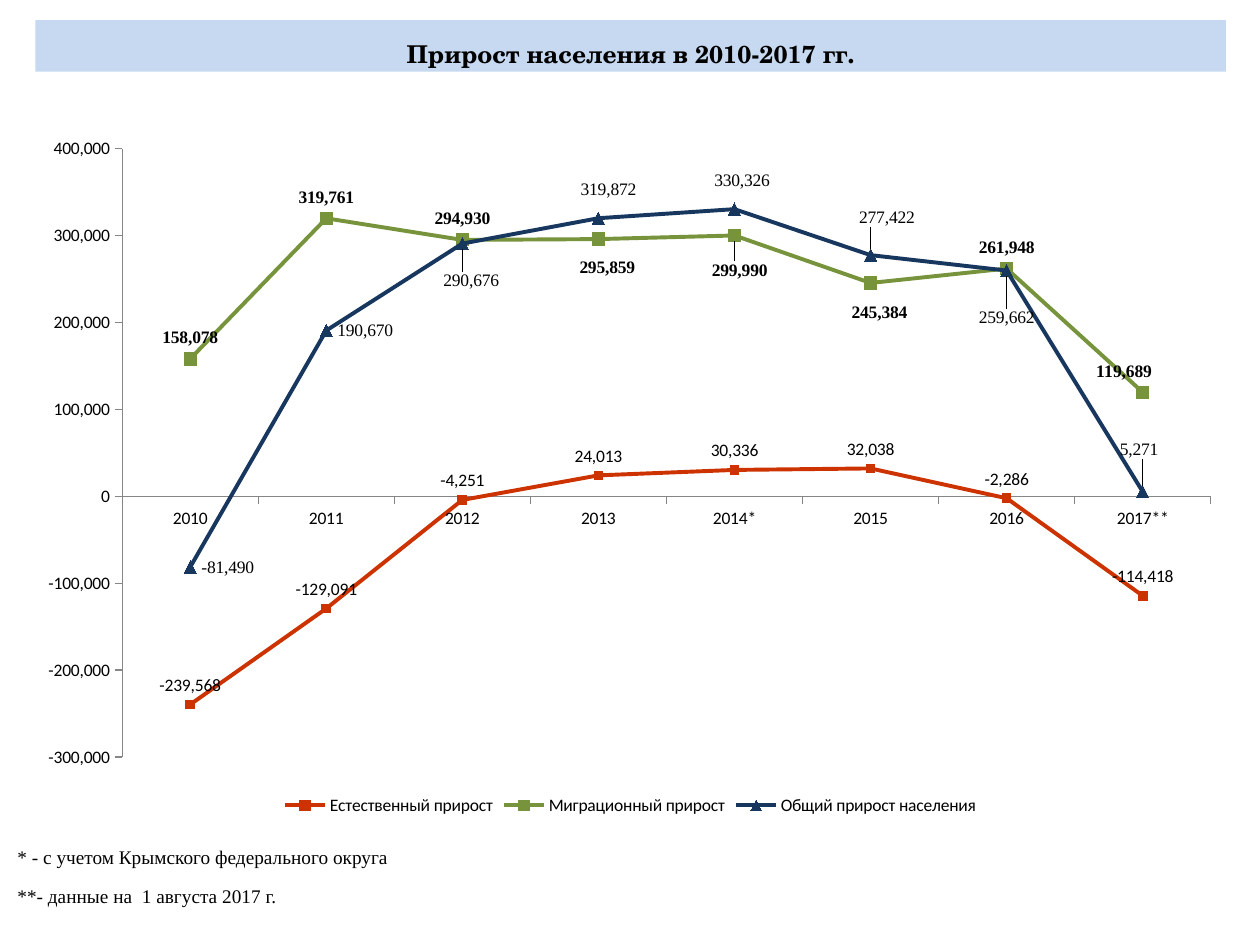
from lxml.etree import SubElement
from pptx import Presentation
from pptx.chart.data import CategoryChartData
from pptx.dml.color import RGBColor
from pptx.enum.chart import (XL_CHART_TYPE, XL_LABEL_POSITION, XL_LEGEND_POSITION,
                             XL_MARKER_STYLE, XL_TICK_MARK)
from pptx.enum.shapes import MSO_SHAPE
from pptx.enum.text import MSO_ANCHOR, MSO_AUTO_SIZE, PP_ALIGN
from pptx.oxml.ns import qn
from pptx.util import Inches, Pt

BLACK = RGBColor(0x00, 0x00, 0x00)
GREY = RGBColor(0x86, 0x86, 0x86)
PALE_BLUE = RGBColor(0xC6, 0xD9, 0xF1)
RED = RGBColor(0xCC, 0x33, 0x00)
GREEN = RGBColor(0x77, 0x93, 0x3C)
NAVY = RGBColor(0x17, 0x37, 0x5E)
SERIF = "Times New Roman"
ABOVE, BELOW, RIGHT = (XL_LABEL_POSITION.ABOVE, XL_LABEL_POSITION.BELOW,
                       XL_LABEL_POSITION.RIGHT)

TITLE = "Прирост населения в 2010-2017 гг."
FOOTNOTES = ["* - с учетом Крымского федерального округа",
             "**- данные на  1 августа 2017 г."]
YEARS = ["2010", "2011", "2012", "2013", "2014*", "2015", "2016", "2017**"]
# "moved" maps a point to its label side and the shift from there, in inches
SERIES = [
    dict(name="Естественный прирост", color=RED, marker=XL_MARKER_STYLE.SQUARE, size=5,
         values=[-239568, -129091, -4251, 24013, 30336, 32038, -2286, -114418],
         font="Calibri", bold=False, side=ABOVE, moved={}),
    dict(name="Миграционный прирост", color=GREEN, marker=XL_MARKER_STYLE.SQUARE, size=7,
         values=[158078, 319761, 294930, 295859, 299990, 245384, 261948, 119689],
         font=SERIF, bold=True, side=ABOVE,
         moved={3: (BELOW, 0.07, 0.06), 4: (BELOW, 0.04, 0.11),
                5: (BELOW, 0.07, 0.07), 7: (ABOVE, -0.15, 0)}),
    dict(name="Общий прирост населения", color=NAVY, marker=XL_MARKER_STYLE.TRIANGLE, size=7,
         values=[-81490, 190670, 290676, 319872, 330326, 277422, 259662, 5271],
         font=SERIF, bold=False, side=RIGHT,
         moved={2: (BELOW, 0.07, 0.13), 3: (ABOVE, 0.08, -0.06),
                4: (ABOVE, 0.06, -0.06), 5: (ABOVE, 0.13, -0.13),
                6: (BELOW, 0, 0.21), 7: (ABOVE, -0.03, -0.17)}),
]
CHART_BOX = (0.2, 0.99, 9.61, 5.52)
PLOT_BOX = (0.97, 1.18, 8.64, 4.83)


def style_font(font, name, size, bold=False):
    font.name, font.size, font.bold = name, Pt(size), bold
    font.color.rgb = BLACK


def fill_layout(layout, **settings):
    """Write a manual chart layout, whose lengths are shares of the chart."""
    manual = SubElement(layout, qn("c:manualLayout"))
    for tag, value in settings.items():
        SubElement(manual, qn(f"c:{tag}")).set("val", str(value))


def add_title(slide):
    banner = slide.shapes.add_shape(MSO_SHAPE.RECTANGLE, Inches(0.28), Inches(0.16),
                                    Inches(9.45), Inches(0.41))
    banner.shadow.inherit = False
    banner.fill.solid()
    banner.fill.fore_color.rgb = PALE_BLUE
    banner.line.fill.background()
    banner.text_frame.text = TITLE
    banner.text_frame.word_wrap = True
    banner.text_frame.vertical_anchor = MSO_ANCHOR.MIDDLE
    paragraph = banner.text_frame.paragraphs[0]
    paragraph.alignment = PP_ALIGN.CENTER
    paragraph.line_spacing = 1.5
    style_font(paragraph.runs[0].font, "TeX Gyre Schola", 14, True)


def add_footnotes(slide):
    for index, note in enumerate(FOOTNOTES):
        box = slide.shapes.add_textbox(Inches(0.04), Inches(6.66 + 0.31 * index),
                                       Inches(4.96), Inches(0.29))
        box.text_frame.word_wrap = True
        box.text_frame.auto_size = MSO_AUTO_SIZE.SHAPE_TO_FIT_TEXT
        box.text_frame.text = note
        style_font(box.text_frame.paragraphs[0].runs[0].font, SERIF, 11)


def style_series(series, item):
    series.smooth = False
    series.format.line.color.rgb = item["color"]
    series.format.line.width = Pt(2.25)
    marker = series.marker
    marker.style, marker.size = item["marker"], item["size"]
    marker.format.fill.solid()
    marker.format.fill.fore_color.rgb = item["color"]
    marker.format.line.color.rgb = item["color"]

    labels = series.data_labels
    labels.show_value = True
    labels.position = item["side"]
    labels.number_format = "#,##0"
    labels.number_format_is_linked = False
    style_font(labels.font, item["font"], 10, item["bold"])
    for index, (side, shift_x, shift_y) in item["moved"].items():
        label = series.points[index].data_label
        style_font(label.font, item["font"], 10, item["bold"])
        label.position = side
        element = labels._element.xpath(f"c:dLbl[c:idx/@val='{index}']")[0]
        layout = SubElement(element, qn("c:layout"))
        element.find(qn("c:idx")).addnext(layout)
        fill_layout(layout, x=round(shift_x / CHART_BOX[2], 4),
                    y=round(shift_y / CHART_BOX[3], 4))


def add_growth_chart(slide):
    data = CategoryChartData(number_format="#,##0")
    data.categories = YEARS
    for item in SERIES:
        data.add_series(item["name"], item["values"])
    chart = slide.shapes.add_chart(XL_CHART_TYPE.LINE_MARKERS,
                                   *map(Inches, CHART_BOX), data).chart
    style_font(chart.font, "Calibri", 10)
    chart.has_title = False
    chart.has_legend = True
    chart.legend.position = XL_LEGEND_POSITION.BOTTOM
    chart.legend.include_in_layout = False

    for axis in (chart.category_axis, chart.value_axis):
        axis.has_major_gridlines = False
        axis.major_tick_mark = XL_TICK_MARK.OUTSIDE
        axis.format.line.color.rgb = GREY
        axis.format.line.width = Pt(0.75)
    value_axis = chart.value_axis
    value_axis.minimum_scale, value_axis.maximum_scale = -300000, 400000
    value_axis.major_unit = 100000
    value_axis.tick_labels.number_format = "#,##0"
    value_axis.tick_labels.number_format_is_linked = False

    plot = chart.plots[0]
    plot.vary_by_categories = False
    for series, item in zip(plot.series, SERIES):
        style_series(series, item)

    plot_area = chart._chartSpace.chart.plotArea
    layout = plot_area.find(qn("c:layout"))
    if layout is None:
        layout = SubElement(plot_area, qn("c:layout"))
        plot_area.insert(0, layout)
    left, top, width, height = CHART_BOX
    fill_layout(layout, layoutTarget="inner", xMode="edge", yMode="edge",
                x=round((PLOT_BOX[0] - left) / width, 4),
                y=round((PLOT_BOX[1] - top) / height, 4),
                w=round(PLOT_BOX[2] / width, 4), h=round(PLOT_BOX[3] / height, 4))


def main():
    presentation = Presentation()
    presentation.slide_width, presentation.slide_height = Inches(10), Inches(7.5)
    slide = presentation.slides.add_slide(presentation.slide_layouts[6])
    add_footnotes(slide)
    add_title(slide)
    add_growth_chart(slide)
    presentation.save("out.pptx")


if __name__ == "__main__":
    main()
